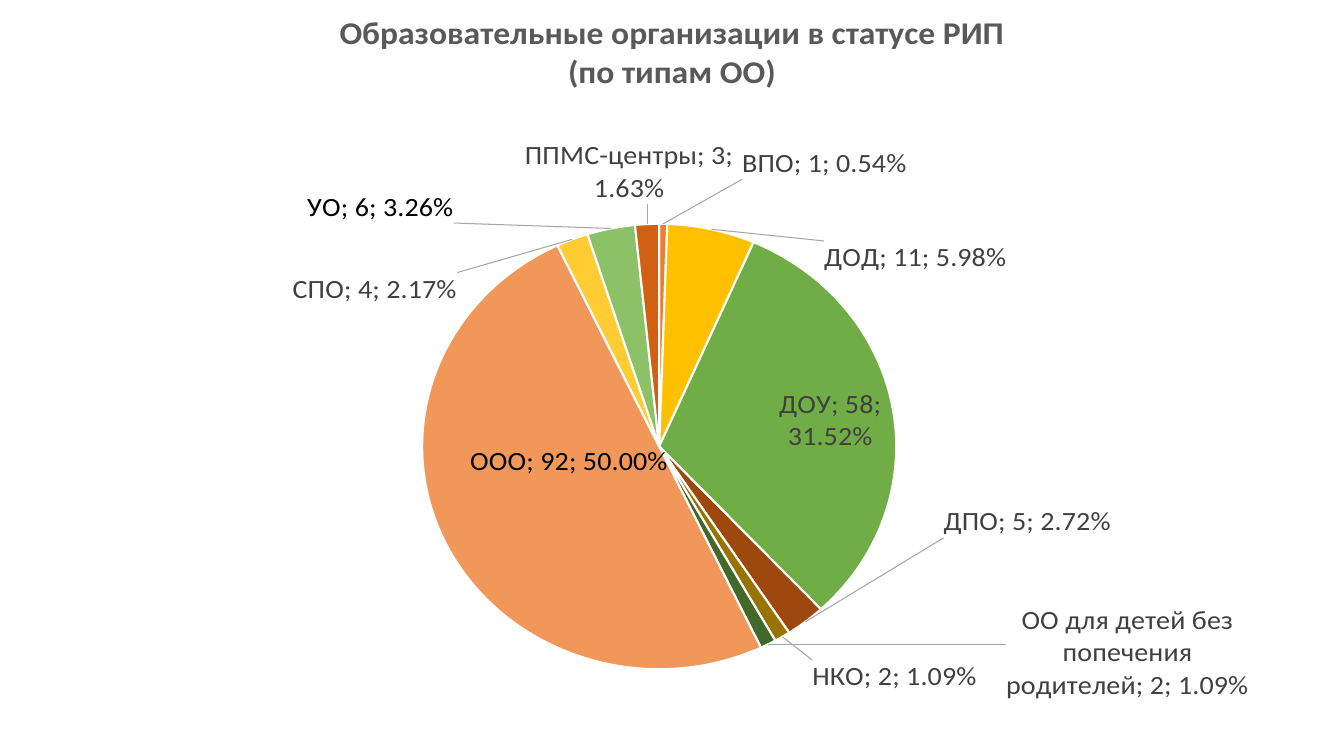
from dataclasses import dataclass

from lxml import etree
from pptx import Presentation
from pptx import util as u
from pptx.chart.data import CategoryChartData
from pptx.dml.color import RGBColor
from pptx.enum import chart as kinds
from pptx.oxml import parse_xml

WHITE = RGBColor(0xFF, 0xFF, 0xFF)
BLACK = RGBColor(0x00, 0x00, 0x00)
DARK = RGBColor(0x40, 0x40, 0x40)
TITLE_GREY = RGBColor(0x59, 0x59, 0x59)
LEADER_GREY = RGBColor(0xA6, 0xA6, 0xA6)
FONT = "Calibri"
TITLE = ("Образовательные организации в статусе РИП", "(по типам ОО)")
NAMESPACES = (
    'xmlns:c="http://schemas.openxmlformats.org/drawingml/2006/chart" '
    'xmlns:a="http://schemas.openxmlformats.org/drawingml/2006/main"'
)


@dataclass(frozen=True)
class Slice:
    """A type of organisation; shift is the label's move as shares of the chart."""
    name: str
    count: int
    fill: RGBColor
    shift: tuple[float, float] | None
    ink: RGBColor = DARK


SLICES = [
    Slice("ВПО", 1, RGBColor(0xED, 0x7D, 0x31), (0.12, -0.055)),
    Slice("ДОД", 11, RGBColor(0xFF, 0xC0, 0x00), (0.083, 0.07)),
    Slice("ДОУ", 58, RGBColor(0x70, 0xAD, 0x47), None),
    Slice("ДПО", 5, RGBColor(0x9E, 0x48, 0x0E), (0.10, -0.17)),
    Slice("НКО", 2, RGBColor(0x99, 0x73, 0x00), (0.02, 0.026)),
    Slice("ОО для детей без попечения родителей", 2,
          RGBColor(0x43, 0x68, 0x2B), (0.175, -0.06)),
    Slice("ООО", 92, RGBColor(0xF1, 0x97, 0x5A), (0.17, -0.14), BLACK),
    Slice("СПО", 4, RGBColor(0xFF, 0xCD, 0x33), (-0.084, 0.10)),
    Slice("УО", 6, RGBColor(0x8C, 0xC1, 0x68), (-0.116, 0), BLACK),
    Slice("ППМС-центры", 3, RGBColor(0xD2, 0x60, 0x12), (-0.013, -0.02)),
]


def layout_xml(x: float, y: float, size: str = "") -> str:
    return (f'<c:layout><c:manualLayout>{size and INNER_EDGES}'
            f'<c:x val="{x}"/><c:y val="{y}"/>{size}</c:manualLayout></c:layout>')


INNER_EDGES = ('<c:layoutTarget val="inner"/><c:xMode val="edge"/>'
               '<c:yMode val="edge"/>')


def label_xml(ink: RGBColor) -> str:
    """Format shared by single labels and by the whole series."""
    return (
        '<c:numFmt formatCode="0.00%" sourceLinked="0"/>'
        '<c:spPr><a:noFill/><a:ln><a:noFill/></a:ln></c:spPr>'
        '<c:txPr><a:bodyPr wrap="square" anchor="ctr"/><a:p><a:pPr>'
        f'<a:defRPr sz="2000" b="0"><a:solidFill><a:srgbClr val="{ink}"/></a:solidFill>'
        f'<a:latin typeface="{FONT}"/></a:defRPr></a:pPr></a:p></c:txPr>'
        '<c:dLblPos val="bestFit"/><c:showLegendKey val="0"/><c:showVal val="1"/>'
        '<c:showCatName val="1"/><c:showSerName val="0"/><c:showPercent val="1"/>'
        '<c:showBubbleSize val="0"/><c:separator>; </c:separator>'
    )


def add_labels(series_xml: etree._Element) -> None:
    moved = "".join(
        f'<c:dLbl><c:idx val="{index}"/>{layout_xml(*part.shift)}'
        f'{label_xml(part.ink)}</c:dLbl>'
        for index, part in enumerate(SLICES) if part.shift
    )
    labels = parse_xml(
        f'<c:dLbls {NAMESPACES}>{moved}{label_xml(DARK)}'
        '<c:showLeaderLines val="1"/><c:leaderLines><c:spPr><a:ln w="9525">'
        f'<a:solidFill><a:srgbClr val="{LEADER_GREY}"/></a:solidFill>'
        '</a:ln></c:spPr></c:leaderLines></c:dLbls>'
    )
    series_xml.find("{*}cat").addprevious(labels)


def add_title(chart, lines: tuple[str, ...]) -> None:
    frame = chart.chart_title.text_frame
    for index, line in enumerate(lines):
        para = frame.add_paragraph() if index else frame.paragraphs[0]
        span = para.add_run()
        span.text = line
        span.font.size = u.Pt(24)
        span.font.bold = True
        span.font.name = FONT
        span.font.color.rgb = TITLE_GREY


def add_pie(page, width: int, height: int) -> None:
    data = CategoryChartData()
    data.categories = [part.name for part in SLICES]
    data.add_series("Series 1", [part.count for part in SLICES])
    chart = page.shapes.add_chart(
        kinds.XL_CHART_TYPE.PIE, 0, int(-0.012 * height), width, height, data
    ).chart
    chart.has_legend = False
    chart.font.name = FONT
    chart.font.size = u.Pt(10)
    chart.font.color.rgb = BLACK
    add_title(chart, TITLE)

    # Slices
    plot = chart.plots[0]
    plot.vary_by_categories = True
    series = plot.series[0]
    for index, part in enumerate(SLICES):
        look = series.points[index].format
        look.fill.solid()
        look.fill.fore_color.rgb = part.fill
        look.line.color.rgb = WHITE
        look.line.width = u.Pt(1.5)
    add_labels(series._element)

    # Place of the pie within the chart
    area = plot._element.getparent()
    for old in area.findall("{*}layout"):
        area.remove(old)
    size = '<c:w val="0.353"/><c:h val="0.627"/>'
    place = layout_xml(0.314, 0.328, size)
    area.insert(0, parse_xml(place.replace("<c:layout>", f"<c:layout {NAMESPACES}>", 1)))


def main() -> None:
    deck = Presentation()
    deck.slide_width, deck.slide_height = u.Inches(13.33), u.Inches(7.5)
    page = deck.slides.add_slide(deck.slide_layouts[6])
    add_pie(page, deck.slide_width, deck.slide_height)
    deck.save("out.pptx")


if __name__ == "__main__":
    main()
